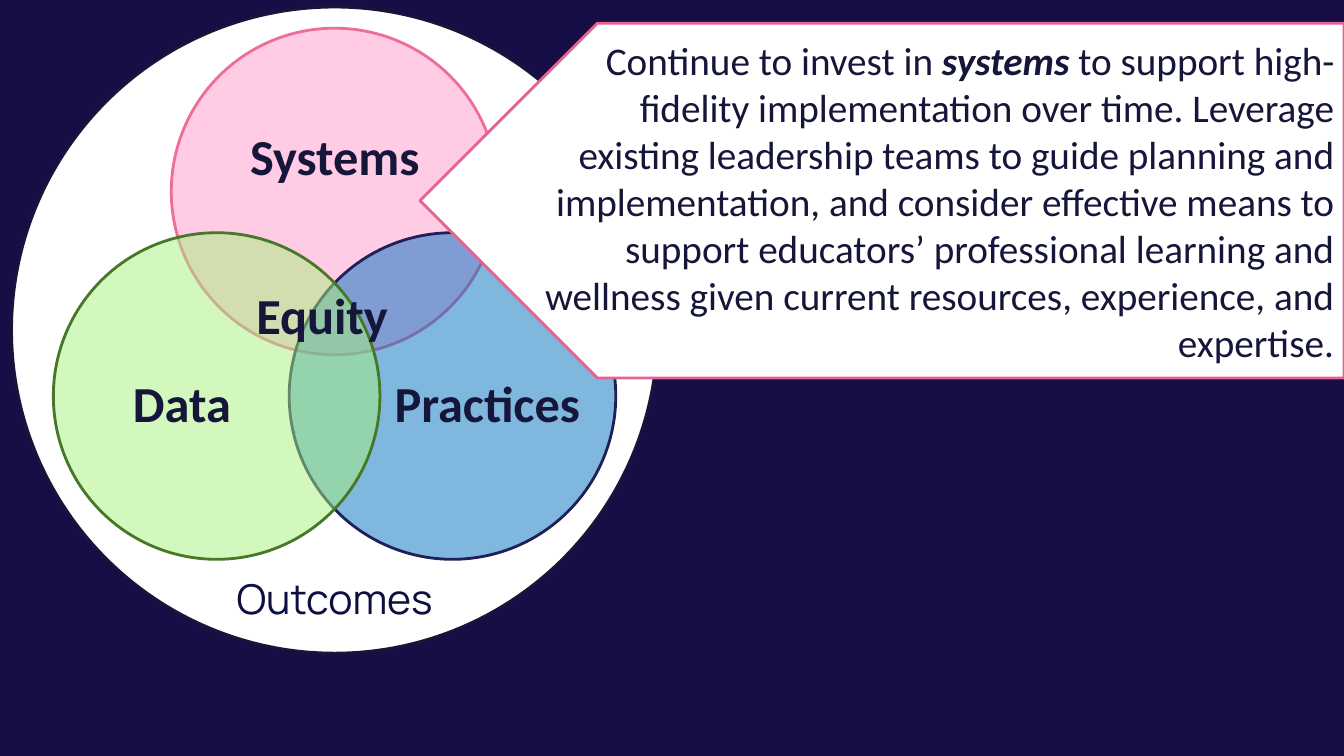
from dataclasses import dataclass
from typing import Any, NamedTuple

from lxml.etree import SubElement
from pptx import Presentation
from pptx.dml.color import RGBColor
from pptx.enum.shapes import MSO_SHAPE as Preset
from pptx.enum.text import MSO_ANCHOR as Anchor, MSO_AUTO_SIZE as AutoSize, PP_ALIGN as Align
from pptx.oxml.ns import qn
from pptx.util import Pt


@dataclass(frozen=True)
class Theme:
    background: str = "160E44"
    paper: str = "FFFFFF"
    ink: str = "15163A"
    outcomes_ink: str = "0D0F41"
    callout_line: str = "E56292"
    body_font: str = "Calibri"
    outcomes_font: str = "Manrope"
    label_size: float = 36
    callout_size: float = 28
    outcomes_size: float = 29.3
    line_width: float = 2
    circle_opacity: int = 50


class Box(NamedTuple):
    left: float
    top: float
    width: float
    height: float


class Run(NamedTuple):
    text: str
    format: dict[str, Any]


@dataclass(frozen=True)
class VennCircle:
    label: str
    center_x: float
    center_y: float
    label_box: Box
    fill: str
    line: str


THEME = Theme()
CENTER_X = 239
CIRCLE_OFFSET = 84.24
CIRCLE_SIZE = 233.28
LOWER_Y = 282.9
LOWER_LABEL_TOP = 226
LOWER_LABEL_SIZE = (140.4, 128.2)

CIRCLES = (
    VennCircle("Systems", CENTER_X, 136.8, Box(153.4, 61.2, 171.4, 105.1), "FF99CC", "EE6E99"),
    VennCircle("Practices", CENTER_X + CIRCLE_OFFSET, LOWER_Y,
               Box(277.9, LOWER_LABEL_TOP, *LOWER_LABEL_SIZE), "0070C0", "1F2156"),
    VennCircle("Data", CENTER_X - CIRCLE_OFFSET, LOWER_Y,
               Box(59.8, LOWER_LABEL_TOP, *LOWER_LABEL_SIZE), "A7F27D", "467827"),
)

LABEL = {"name": THEME.body_font, "size": Pt(THEME.label_size), "bold": True}
CALLOUT = {"name": THEME.body_font, "size": Pt(THEME.callout_size)}
OUTCOMES = {"name": THEME.outcomes_font, "size": Pt(THEME.outcomes_size)}
NO_MARGINS = {f"margin_{side}": 0 for side in ("left", "top", "right", "bottom")}
CENTERED = {"alignment": Align.CENTER}

CALLOUT_RUNS = (
    Run("Continue to invest in ", CALLOUT),
    Run("systems", CALLOUT | {"bold": True, "italic": True}),
    Run(" to support high-fidelity implementation over time. Leverage existing leadership teams "
        "to guide planning and implementation, and consider effective means to support educators’ "
        "professional learning and wellness given current resources, experience, and expertise.",
        CALLOUT),
)


def apply_format(target: Any, values: dict[str, Any]) -> None:
    for name, value in values.items():
        setattr(target, name, value)


def circle_box(center_x: float, center_y: float, size: float) -> Box:
    return Box(center_x - size / 2, center_y - size / 2, size, size)


def add_shape(shapes: Any, preset: Preset, box: Box, fill: str, line: str,
              opacity: int = 100) -> Any:
    shape = shapes.add_shape(preset, *map(Pt, box))
    shape.shadow.inherit = False
    shape.fill.solid()
    shape.fill.fore_color.rgb = RGBColor.from_string(fill)
    if opacity < 100:
        color = shape.fill._xPr.find(qn("a:solidFill"))[0]
        SubElement(color, qn("a:alpha"), val=str(opacity * 1000))
    shape.line.color.rgb = RGBColor.from_string(line)
    shape.line.width = Pt(THEME.line_width)
    return shape


def write_text(shape: Any, runs: tuple[Run, ...], frame_format: dict[str, Any],
               paragraph_format: dict[str, Any], color: str = THEME.ink) -> None:
    frame = shape.text_frame
    apply_format(frame, {"word_wrap": True} | frame_format)
    paragraph = frame.paragraphs[0]
    apply_format(paragraph, paragraph_format)
    for item in runs:
        run = paragraph.add_run()
        run.text = item.text
        apply_format(run.font, item.format)
        run.font.color.rgb = RGBColor.from_string(color)


def add_label(shapes: Any, box: Box, run: Run, frame_format: dict[str, Any],
              paragraph_format: dict[str, Any] = CENTERED, color: str = THEME.ink) -> None:
    write_text(shapes.add_textbox(*map(Pt, box)), (run,), frame_format, paragraph_format, color)


def add_venn(slide: Any) -> None:
    shapes = slide.shapes.add_group_shape().shapes
    for circle in CIRCLES:
        box = circle_box(circle.center_x, circle.center_y, CIRCLE_SIZE)
        add_shape(shapes, Preset.OVAL, box, circle.fill, circle.line, THEME.circle_opacity)
        add_label(shapes, circle.label_box, Run(circle.label, LABEL),
                  NO_MARGINS | {"vertical_anchor": Anchor.MIDDLE},
                  CENTERED | {"line_spacing": 0.9})


def add_callout(slide: Any) -> None:
    callout = add_shape(slide.shapes, Preset.PENTAGON, Box(300, 16.6, 660, 253.4),
                        THEME.paper, THEME.callout_line)
    callout._element.spPr.find(qn("a:xfrm")).set("flipH", "1")
    write_text(callout, CALLOUT_RUNS, {"vertical_anchor": Anchor.MIDDLE},
               {"alignment": Align.RIGHT})


def main() -> None:
    presentation = Presentation()
    presentation.slide_width, presentation.slide_height = Pt(960), Pt(540)
    slide = presentation.slides.add_slide(presentation.slide_layouts.get_by_name("Blank"))
    slide.background.fill.solid()
    slide.background.fill.fore_color.rgb = RGBColor.from_string(THEME.background)

    add_shape(slide.shapes, Preset.OVAL, circle_box(CENTER_X, 235.8, 461.5),
              THEME.paper, THEME.ink)
    add_venn(slide)
    add_label(slide.shapes, Box(127.4, 406, 223.2, 42.5), Run("Outcomes", OUTCOMES),
              {"auto_size": AutoSize.SHAPE_TO_FIT_TEXT}, color=THEME.outcomes_ink)
    add_label(slide.shapes, Box(160.6, 193.7, 139, 66.2), Run("Equity", LABEL),
              NO_MARGINS | {"margin_top": Pt(9.2)})
    add_callout(slide)
    presentation.save("out.pptx")


if __name__ == "__main__":
    main()
